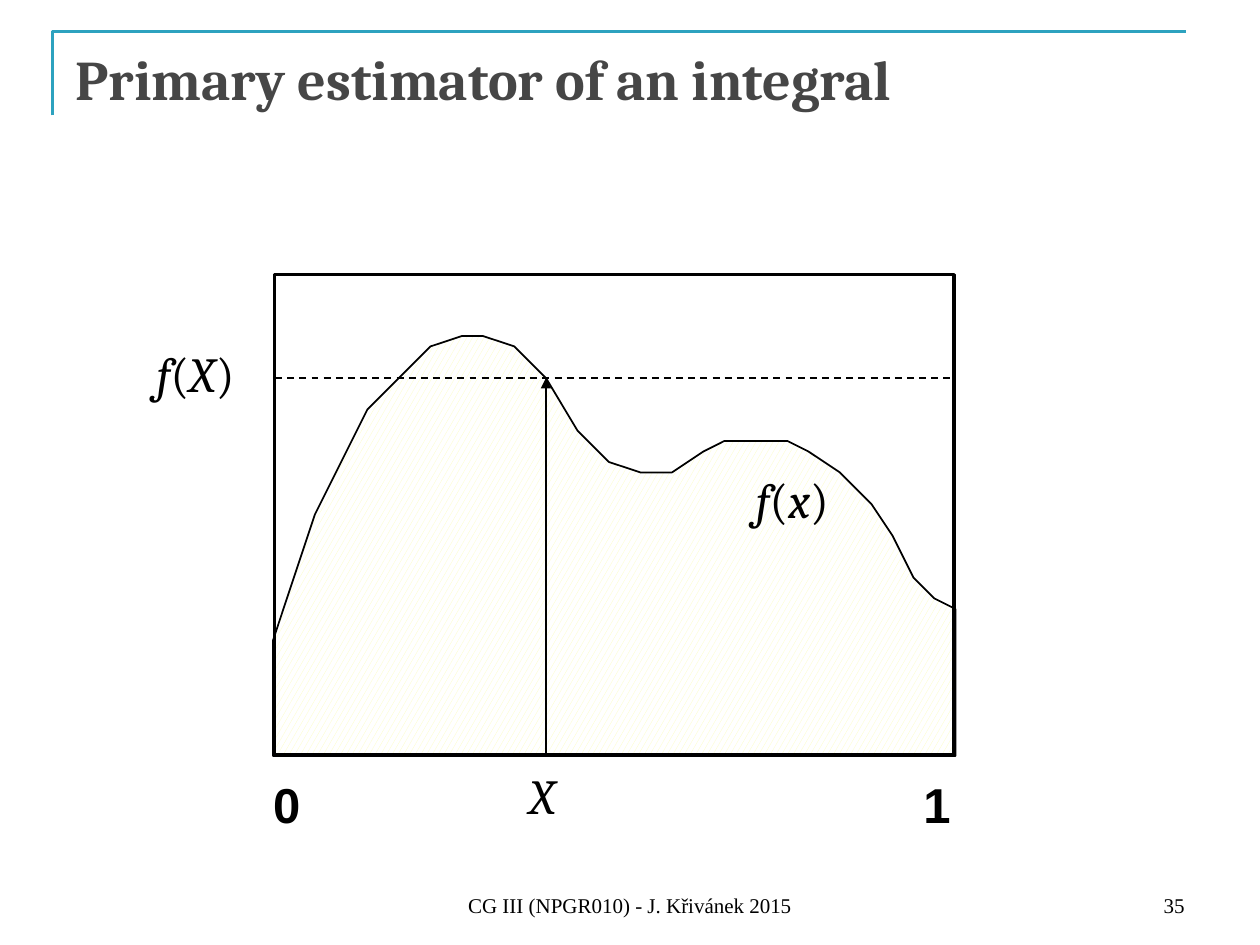
from lxml.etree import SubElement
from pptx import Presentation
from pptx.dml.color import RGBColor
from pptx.enum.dml import MSO_LINE as Dash, MSO_PATTERN as Pat
from pptx.enum.shapes import MSO_CONNECTOR as Conn, MSO_SHAPE as Kind
from pptx.enum.text import MSO_ANCHOR as Anchor, MSO_AUTO_SIZE as Fit, PP_ALIGN as Align
from pptx.oxml.ns import qn
from pptx.util import Inches, Pt

# The slide is a grid of 120 columns by 90 rows
U = Inches(10) // 120
BLACK = "000000"


def rgb(code):
    return RGBColor.from_string(code)


def write(frame, runs, font, size, color=BLACK, bold=False):
    """Fill the first paragraph with (text, italic) runs."""
    par = frame.paragraphs[0]
    for text, slant in runs:
        run = par.add_run()
        run.text = text
        run.font.name, run.font.size = font, Pt(size)
        run.font.bold, run.font.italic = bold, slant
        run.font.color.rgb = rgb(color)
    return par


deck = Presentation()
deck.slide_width, deck.slide_height = 120 * U, 90 * U
slide = deck.slides.add_slide(deck.slide_layouts[5])
shapes = slide.shapes

# Title and its corner rule
title = shapes.title
title.left, title.top, title.width, title.height = (
    6 * U, Inches(0.3), 108 * U, 15 * U)
title.text_frame.vertical_anchor = Anchor.TOP
title.text_frame.auto_size = Fit.NONE
par = write(title.text_frame, [("Primary estimator of an integral", False)],
            "Cambria", 32, "464646", True)
par.alignment = Align.LEFT

pen = shapes.build_freeform(5, 11, scale=U)
pen.add_line_segments([(5, 3), (113, 3)], close=False)
rule = pen.convert_to_shape()
rule.shadow.inherit = False
rule.fill.background()
rule.line.color.rgb, rule.line.width = rgb("2DA2BF"), Pt(1.5)

# Area under f(x), in grid units
curve = [(26, 61), (30, 49), (35, 39), (41, 33), (44, 32), (46, 32), (49, 33),
         (52, 36), (55, 41), (58, 44), (61, 45), (64, 45), (67, 43), (69, 42),
         (72, 42), (75, 42), (77, 43), (80, 45), (83, 48), (85, 51), (87, 55),
         (89, 57), (91, 58)]
base = [(91, 72), (26, 72)]
pen = shapes.build_freeform(*curve[0], scale=U)
pen.add_line_segments(curve[1:] + base, close=True)
area = pen.convert_to_shape()
area.shadow.inherit = False
area.fill.patterned()
area.fill.pattern = Pat.LARGE_CONFETTI
area.fill.fore_color.rgb = rgb("FCFEB9")
area.fill.back_color.rgb = rgb("FFFFFF")
area.line.color.rgb, area.line.width = rgb(BLACK), Pt(1)

# Unit frame
frame = shapes.add_shape(Kind.RECTANGLE, Inches(2.18), Inches(2.18),
                         Inches(5.39), Inches(3.81))
frame.shadow.inherit = False
frame.fill.background()
frame.line.color.rgb, frame.line.width = rgb(BLACK), Pt(2)

# Sample arrow at X and the dashed level f(X)
for x1, y1, x2, y2, arrow in [(52, 72, 52, 36, True), (26.2, 36, 91, 36, False)]:
    line = shapes.add_connector(Conn.STRAIGHT, int(x1 * U), y1 * U, x2 * U, y2 * U)
    line.line.color.rgb, line.line.width = rgb(BLACK), Pt(1)
    if arrow:
        SubElement(line.line._get_or_add_ln(), qn("a:tailEnd"), type="triangle")
    else:
        line.line.dash_style = Dash.DASH
    SubElement(line._element.spPr, qn("a:effectLst"))

# Labels: left, top, width, runs, font, bold
labels = [
    (4.1, 6.03, 0.48, [("X", True)], "Cambria", False),
    (5.9, 3.68, 0.82, [("f", True), ("(", False), ("x", True), (")", False)],
     "Cambria", False),
    (1.06, 2.68, 1, [(" ", False), ("f", True), ("(", False), ("X", True),
                     (")", False)], "Cambria", False),
    (2.07, 6.1, 0.42, [("0", False)], "Arial", True),
    (7.23, 6.1, 0.42, [("1", False)], "Arial", True),
]
for left, top, width, runs, font, bold in labels:
    box = shapes.add_textbox(Inches(left), Inches(top), Inches(width), Inches(0.57))
    box.text_frame.word_wrap = False
    box.text_frame.auto_size = Fit.SHAPE_TO_FIT_TEXT
    write(box.text_frame, runs, font, 28, bold=bold)

# Footer and page number
for col, wide, text, side in [
        (41, 38, "CG III (NPGR010) - J. Křivánek 2015", Align.CENTER),
        (86, 28, "35", Align.RIGHT)]:
    box = shapes.add_textbox(col * U, 82 * U, wide * U, 6 * U)
    box.text_frame.word_wrap = True
    box.text_frame.vertical_anchor = Anchor.BOTTOM
    par = write(box.text_frame, [(text, False)], "Times New Roman", 12)
    par.alignment = side

deck.save("out.pptx")
